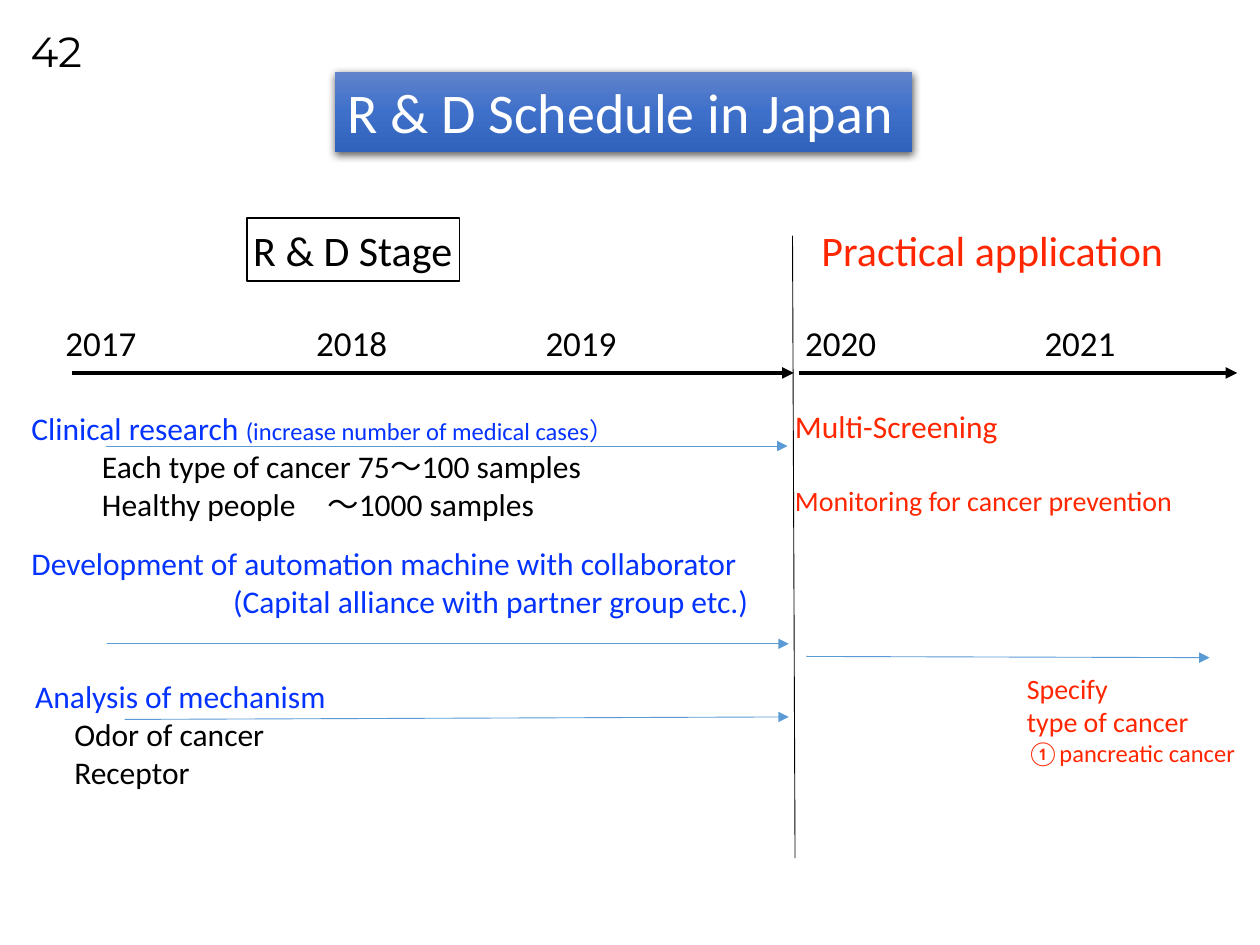
from copy import deepcopy

from lxml.etree import SubElement
from pptx import Presentation
from pptx.dml.color import RGBColor
from pptx.enum.shapes import MSO_CONNECTOR, MSO_SHAPE
from pptx.enum.text import MSO_ANCHOR, MSO_AUTO_SIZE, PP_ALIGN
from pptx.oxml.ns import qn
from pptx.util import Inches, Pt

THEME = {
    "font": "Calibri", "number_font": "Montserrat",
    "black": "000000", "white": "FFFFFF", "blue": "0432FF", "red": "FF2600", "arrow": "5B9BD5",
    "banner": [(0, "6183CB"), (0.5, "3E70CA"), (1, "3062BB")],
    "title": 32, "heading": 24, "year": 20, "body": 18, "small": 16, "note": 14,
    "thick": 2.25, "thin": 0.5, "border": 0.75,
}
BODY, SMALL, NOTE = THEME["body"], THEME["small"], THEME["note"]

PAGE_NUMBER = "42"
TITLE = "R & D Schedule in Japan"
RESEARCH_STAGE = "R & D Stage"
PRACTICAL_STAGE = "Practical application"
YEARS = [("2017", 0.47), ("2018", 2.46), ("2019", 4.28), ("2020", 6.34), ("2021", 8.24)]

ACTIVITIES = [
    ((0.2, 3.19, 4.84, 1.01), [
        ([("Clinical research ", BODY, "blue"),
          ("(increase number of medical cases）", NOTE, "blue")], 0, 0),
        ([("Each type of cancer 75～100 samples", BODY, "black")], 0.56, 0),
        ([("Healthy people　～1000 samples", BODY, "black")], 0.56, 0)]),
    ((0.2, 4.27, 5.74, 0.4), [
        ([("Development of automation machine with collaborator", BODY, "blue")], 0, 0)]),
    ((1.8, 4.57, 4.42, 0.4), [
        ([("(Capital alliance with partner group etc.)", BODY, "blue")], 0, 0)]),
    ((0.23, 5.32, 2.43, 1.01), [
        ([("Analysis of mechanism", BODY, "blue")], 0, 0),
        ([("Odor of cancer", BODY, "black")], 0.31, 0),
        ([("Receptor", BODY, "black")], 0.31, 0)]),
    ((6.26, 3.18, 3.14, 0.98), [
        ([("Multi-Screening", BODY, "red")], 0, 0),
        ([("Monitoring for cancer prevention", SMALL, "red")], 0, 22)]),
    ((8.1, 5.27, 1.99, 0.88), [
        ([("Specify", SMALL, "red")], 0, 0),
        ([("type of cancer", SMALL, "red")], 0, 0),
        ([("①pancreatic cancer", NOTE, "red")], 0, 0)]),
]

STAGE_DIVIDER = (6.29, 1.87, 6.31, 6.81)
TIMELINES = [(0.57, 2.96, 6.3, 2.96), (6.34, 2.96, 9.82, 2.96)]
ACTIVITY_ARROWS = [(0.84, 3.54, 6.25, 3.54), (0.85, 5.11, 6.26, 5.11),
                   (0.99, 5.71, 6.26, 5.69), (6.4, 5.21, 9.6, 5.22)]


def color(name):
    return RGBColor.from_string(THEME.get(name, name))


def line(slide, ends, ink, width, arrow=True):
    connector = slide.shapes.add_connector(MSO_CONNECTOR.STRAIGHT, *map(Inches, ends))
    connector.line.color.rgb = color(ink)
    connector.line.width = Pt(width)
    properties = connector.element.spPr
    if arrow:
        SubElement(properties.find(qn("a:ln")), qn("a:tailEnd"), type="triangle")
    SubElement(properties, qn("a:effectLst"))


def write(slide, text, box, size=BODY, ink="black", font=THEME["font"], align=PP_ALIGN.LEFT,
          anchor=MSO_ANCHOR.MIDDLE, inset=0.05, wrap=False, grow=True, framed=False):
    place = map(Inches, box)
    if framed:
        holder = slide.shapes.add_shape(MSO_SHAPE.RECTANGLE, *place)
        holder.shadow.inherit = False
        holder.fill.background()
        holder.line.color.rgb = color("black")
        holder.line.width = Pt(THEME["border"])
    else:
        holder = slide.shapes.add_textbox(*place)
    frame = holder.text_frame
    frame.word_wrap = wrap
    frame.auto_size = MSO_AUTO_SIZE.SHAPE_TO_FIT_TEXT if grow else MSO_AUTO_SIZE.NONE
    frame.vertical_anchor = anchor
    frame.margin_left = frame.margin_right = Inches(inset)
    frame.margin_top = frame.margin_bottom = Inches(0.05)
    paragraphs = [([(text, size, ink)], 0, 0)] if isinstance(text, str) else text
    for index, (runs, indent, before) in enumerate(paragraphs):
        paragraph = frame.add_paragraph() if index else frame.paragraphs[0]
        paragraph.alignment = align
        if indent:
            properties = paragraph._p.get_or_add_pPr()
            properties.set("marL", str(Inches(indent)))
            properties.set("indent", "0")
        if before:
            paragraph.space_before = Pt(before)
        for words, points, shade in runs:
            run = paragraph.add_run()
            run.text = words
            run.font.name = font
            run.font.size = Pt(points)
            run.font.color.rgb = color(shade)
    return holder


def decorate_banner(banner):
    banner.line.fill.background()
    banner.fill.gradient()
    banner.fill.gradient_angle = 270
    stop_list = banner.element.spPr.find(qn("a:gradFill")).find(qn("a:gsLst"))
    stop_list.append(deepcopy(stop_list[0]))
    for stop, (position, shade) in zip(banner.fill.gradient_stops, THEME["banner"]):
        stop.position = position
        stop.color.rgb = color(shade)
    effects = banner.element.spPr.find(qn("a:effectLst"))
    shadow = SubElement(effects, qn("a:outerShdw"), blurRad=str(Pt(4.5)), dist=str(Pt(1.5)),
                        dir="5400000", algn="ctr", rotWithShape="0")
    ink = SubElement(shadow, qn("a:srgbClr"), val=THEME["black"])
    SubElement(ink, qn("a:alpha"), val="63000")


def main():
    """Build the R & D schedule slide."""
    deck = Presentation()
    deck.slide_width, deck.slide_height = Inches(10), Inches(7.5)
    slide = deck.slides.add_slide(deck.slide_layouts[6])

    for year, left in YEARS:
        write(slide, year, (left, 2.5, 0.67, 0.44), size=THEME["year"])
    write(slide, RESEARCH_STAGE, (1.96, 1.73, 1.69, 0.5), size=THEME["heading"], framed=True)
    write(slide, PRACTICAL_STAGE, (6.47, 1.73, 2.84, 0.5), size=THEME["heading"], ink="red")
    for box, paragraphs in ACTIVITIES:
        write(slide, paragraphs, box)

    line(slide, STAGE_DIVIDER, "black", THEME["thin"], arrow=False)
    for ends in TIMELINES:
        line(slide, ends, "black", THEME["thick"])
    for ends in ACTIVITY_ARROWS:
        line(slide, ends, "arrow", THEME["thin"])

    banner = write(slide, TITLE, (2.66, 0.57, 4.58, 0.64), size=THEME["title"], ink="white",
                   anchor=MSO_ANCHOR.TOP, inset=0.1, framed=True)
    decorate_banner(banner)
    write(slide, PAGE_NUMBER, (0, 0, 0.75, 0.8), size=THEME["heading"],
          font=THEME["number_font"], align=PP_ALIGN.RIGHT, inset=0.1, wrap=True, grow=False)
    deck.save("out.pptx")


if __name__ == "__main__":
    main()
